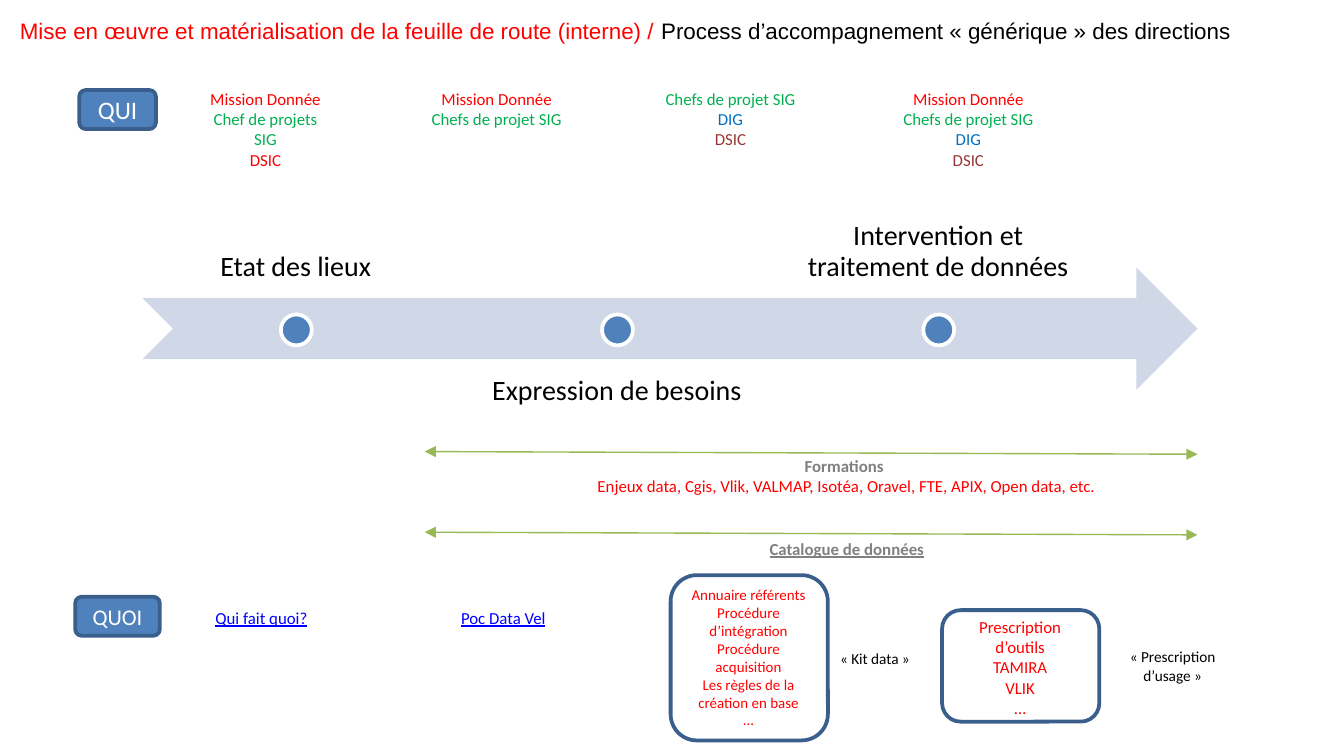
from dataclasses import dataclass

from lxml.etree import SubElement
from pptx import Presentation
from pptx.dml.color import RGBColor
from pptx.enum.shapes import MSO_CONNECTOR, MSO_SHAPE
from pptx.enum.text import MSO_ANCHOR, MSO_AUTO_SIZE, PP_ALIGN
from pptx.oxml.ns import qn
from pptx.util import Inches, Pt


@dataclass(frozen=True)
class Theme:
    red: str = "FF0000"
    green: str = "00B050"
    blue: str = "0070C0"
    brown: str = "953735"
    black: str = "000000"
    white: str = "FFFFFF"
    grey: str = "808080"
    link: str = "0000FF"
    accent: str = "4F81BD"
    outline: str = "3A5F8C"
    arrow: str = "D0D8E8"
    span: str = "98B955"
    body_font: str = "Calibri"
    title_font: str = "Arial"
    step_size: float = 15
    who_size: float = 13.5
    what_size: float = 12
    title_size: float = 12
    body_size: float = 9
    caption_size: float = 8.2
    kit_size: float = 8


theme = Theme()
presentation = Presentation()
# 16:9 page
presentation.slide_width = Inches(10)
presentation.slide_height = Inches(10) * 9 // 16
slide = presentation.slides.add_slide(presentation.slide_layouts[6])


def add_block(kind, left, top, width, height, fill=None, line=None):
    block = slide.shapes.add_shape(kind, Inches(left), Inches(top), Inches(width), Inches(height))
    block.shadow.inherit = False
    if fill:
        block.fill.solid()
        block.fill.fore_color.rgb = RGBColor.from_string(fill)
    else:
        block.fill.background()
    if line:
        block.line.color.rgb = RGBColor.from_string(line)
        block.line.width = Pt(2)
    else:
        block.line.fill.background()
    return block


def add_text(left, top, width, height, paragraphs, size=theme.body_size,
             font=theme.body_font, align=PP_ALIGN.CENTER):
    """Each paragraph is a list of runs: (text, colour, *styles)."""
    box = slide.shapes.add_textbox(Inches(left), Inches(top), Inches(width), Inches(height))
    frame = box.text_frame
    frame.word_wrap = True
    frame.auto_size = MSO_AUTO_SIZE.SHAPE_TO_FIT_TEXT
    for index, runs in enumerate(paragraphs):
        paragraph = frame.paragraphs[0] if index == 0 else frame.add_paragraph()
        paragraph.alignment = align
        for text, colour, *styles in runs:
            run = paragraph.add_run()
            run.text = text
            run.font.name, run.font.size = font, Pt(size)
            run.font.color.rgb = RGBColor.from_string(colour)
            run.font.bold = "bold" in styles
            run.font.underline = "underline" in styles
    return frame


# Process arrow with its three steps
add_block(MSO_SHAPE.NOTCHED_RIGHT_ARROW, 1.06, 1.99, 7.85, 0.91, theme.arrow)
steps = [
    ("Etat des lieux", 1.31, MSO_ANCHOR.BOTTOM),
    ("Expression de besoins", 2.68, MSO_ANCHOR.TOP),
    ("Intervention et traitement de données", 1.31, MSO_ANCHOR.BOTTOM),
]
for index, (step, top, anchor) in enumerate(steps):
    offset = 2.39 * index
    label = add_text(1.06 + offset, top, 2.28, 0.91, [[(step, theme.black)]], theme.step_size)
    label.auto_size = MSO_AUTO_SIZE.NONE
    label.vertical_anchor = anchor
    label.margin_left = label.margin_right = Inches(0.12)
    label.margin_top = label.margin_bottom = Inches(0.12)
    label.paragraphs[0].line_spacing = 0.9
    add_block(MSO_SHAPE.OVAL, 2.09 + offset, 2.34, 0.23, 0.23, theme.accent, theme.white)

# Who: teams for each stage
mission = ("Mission Donnée", theme.red)
leads = ("Chefs de projet SIG", theme.green)
dig = ("DIG", theme.blue)
dsic = ("DSIC", theme.brown)
teams = [
    (1.41, 1.13, 0.71, [mission, ("Chef de projets SIG", theme.green), ("DSIC", theme.red)]),
    (3.11, 1.17, 0.4, [mission, leads]),
    (4.85, 1.17, 0.56, [leads, dig, dsic]),
    (6.62, 1.17, 0.71, [mission, leads, dig, dsic]),
]
for left, width, height, members in teams:
    add_text(left, 0.61, width, height, [[member] for member in members])

# Row badges
for name, left, top, width, size in [
    ("QUI", 0.59, 0.67, 0.57, theme.who_size),
    ("QUOI", 0.56, 4.44, 0.63, theme.what_size),
]:
    badge = add_block(MSO_SHAPE.ROUNDED_RECTANGLE, left, top, width, 0.29, theme.accent, theme.outline)
    badge.text_frame.word_wrap = False
    badge.text_frame.vertical_anchor = MSO_ANCHOR.MIDDLE
    badge_paragraph = badge.text_frame.paragraphs[0]
    badge_paragraph.alignment = PP_ALIGN.CENTER
    badge_run = badge_paragraph.add_run()
    badge_run.text = name
    badge_run.font.name, badge_run.font.size = theme.body_font, Pt(size)
    badge_run.font.color.rgb = RGBColor.from_string(theme.white)

# What: deliverables
for left, deliverable in [(1.41, "Qui fait quoi?"), (3.21, "Poc Data Vel")]:
    add_text(left, 4.47, 1.07, 0.25, [[(deliverable, theme.link, "underline")]])

# Training and catalogue spans
for top in (3.36, 3.96):
    span = slide.shapes.add_connector(
        MSO_CONNECTOR.STRAIGHT, Inches(3.16), Inches(top), Inches(8.91), Inches(top + 0.02))
    span.line.color.rgb = RGBColor.from_string(theme.span)
    span.line.width = Pt(0.75)
    outline = span.line._get_or_add_ln()
    for end in ("a:headEnd", "a:tailEnd"):
        SubElement(outline, qn(end), type="triangle")
    SubElement(span._element.spPr, qn("a:effectLst"))
add_text(4.08, 3.34, 4.43, 0.4, [
    [("Formations ", theme.grey, "bold")],
    [("Enjeux data, Cgis, Vlik, VALMAP, Isotéa, Oravel, FTE, APIX, Open data, etc.", theme.red)],
])
add_text(4.81, 3.96, 2.98, 0.25, [[("Catalogue de données", theme.grey, "bold", "underline")]])

# Data kit and tool prescription boxes
kit = ["Annuaire référents", "Procédure d’intégration", "Procédure acquisition",
       "Les règles de la création en base", "…"]
tools = ["Prescription d’outils", "TAMIRA", "VLIK", "…"]
for left, top, height, text_top, text_height, items, size in [
    (4.99, 4.28, 1.23, 4.31, 1.18, kit, theme.kit_size),
    (7.01, 4.54, 0.83, 4.54, 0.86, tools, theme.body_size),
]:
    add_block(MSO_SHAPE.ROUNDED_RECTANGLE, left, top, 1.17, height, line=theme.outline)
    add_text(left + 0.02, text_top, 1.12, text_height, [[(item, theme.red)] for item in items], size)

# Captions beside the boxes
for left, top, width, height, caption in [
    (6.12, 4.78, 0.78, 0.24, "« Kit data »"),
    (8.2, 4.77, 1.05, 0.38, "« Prescription d’usage »"),
]:
    add_text(left, top, width, height, [[(caption, theme.black)]], theme.caption_size)

# Title
add_text(0.05, 0.08, 9.6, 0.3, [[
    ("Mise en œuvre et matérialisation de la feuille de route (interne) / ", theme.red),
    ("Process d’accompagnement « générique » des directions", theme.black),
]], theme.title_size, theme.title_font, PP_ALIGN.LEFT)

presentation.save("out.pptx")
